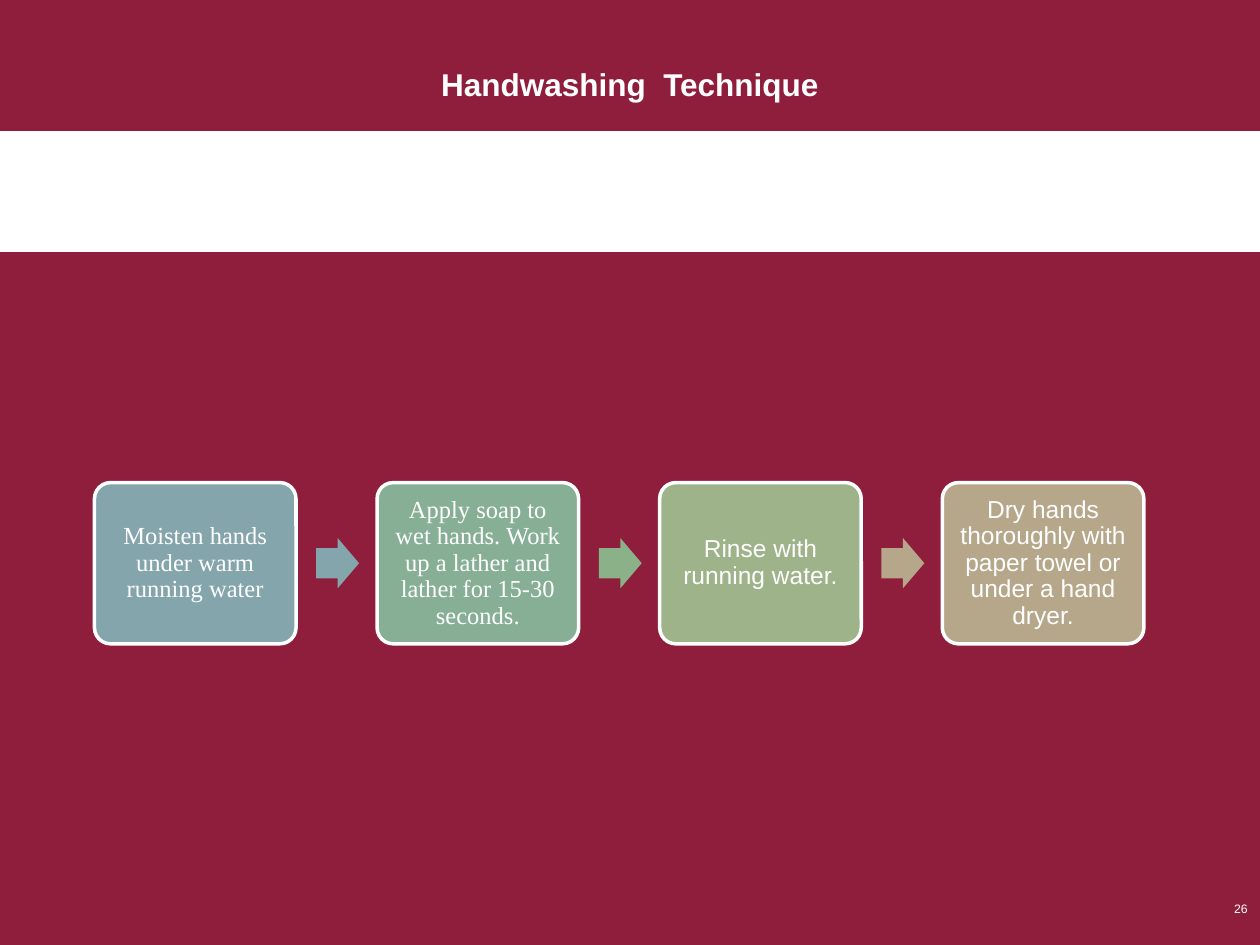
from pptx import Presentation
from pptx.dml.color import RGBColor
from pptx.enum.shapes import MSO_SHAPE as Shape
from pptx.enum.text import MSO_ANCHOR as Anchor, PP_ALIGN as Align
from pptx.util import Inches, Pt

BURGUNDY = RGBColor(0x8E, 0x1E, 0x3C)
WHITE = RGBColor(0xFF, 0xFF, 0xFF)
BLUE = RGBColor(0x85, 0xA5, 0xAC)
TEAL = RGBColor(0x87, 0xAF, 0x95)
GREEN = RGBColor(0x8B, 0xB1, 0x88)
OLIVE = RGBColor(0x9E, 0xB3, 0x89)
TAN = RGBColor(0xB6, 0xA7, 0x8B)

WIDTH, HEIGHT = 10, 7.5
BAND_TOP, BAND_HEIGHT = 1.04, 0.96
FIRST_COLUMN, COLUMN_STEP, ROW_MIDDLE = 0.75, 2.243, 4.47
STEP_WIDTH, STEP_HEIGHT = 1.6, 1.28
ARROW_OFFSET, ARROW_WIDTH, ARROW_HEIGHT = 1.76, 0.34, 0.4

STEPS = [
    ("Moisten hands under warm running water", "Times New Roman", BLUE, BLUE),
    ("Apply soap to wet hands. Work up a lather and lather for 15-30 seconds.",
     "Times New Roman", TEAL, GREEN),
    ("Rinse with running water.", "Arial", OLIVE, TAN),
    ("Dry hands thoroughly with paper towel or under a hand dryer.", "Arial", TAN, None),
]


def add_block(kind, left, top, width, height, color, adjustments=()):
    shape = slide.shapes.add_shape(
        kind, Inches(left), Inches(top), Inches(width), Inches(height))
    shape.shadow.inherit = False
    shape.fill.solid()
    shape.fill.fore_color.rgb = color
    shape.line.fill.background()
    for index, value in enumerate(adjustments):
        shape.adjustments[index] = value
    return shape


def write_text(shape, text, inset, font_format, paragraph_format):
    frame = shape.text_frame
    frame.word_wrap = True
    frame.vertical_anchor = Anchor.MIDDLE
    for side in ("left", "top", "right", "bottom"):
        setattr(frame, f"margin_{side}", Inches(inset))
    paragraph = frame.paragraphs[0]
    paragraph.text = text
    for name, value in paragraph_format.items():
        setattr(paragraph, name, value)
    for name, value in font_format.items():
        setattr(paragraph.font, name, value)
    paragraph.font.color.rgb = WHITE


presentation = Presentation()
presentation.slide_width = Inches(WIDTH)
presentation.slide_height = Inches(HEIGHT)
slide = presentation.slides.add_slide(presentation.slide_layouts[6])
slide.background.fill.solid()
slide.background.fill.fore_color.rgb = BURGUNDY

add_block(Shape.RECTANGLE, 0, BAND_TOP, WIDTH, BAND_HEIGHT, WHITE)

title = slide.shapes.add_textbox(
    Inches(1.11), 0, Inches(WIDTH - 2 * 1.11), Inches(BAND_TOP))
write_text(title, "Handwashing  Technique", 0.1,
           {"name": "Arial", "size": Pt(18), "bold": True}, {"alignment": Align.CENTER})
title.text_frame.margin_top = Inches(0.4)

page_number = slide.shapes.add_textbox(
    Inches(0.04), Inches(HEIGHT - 0.57), Inches(WIDTH - 0.04), Inches(0.57))
write_text(page_number, "26", 0.1,
           {"name": "Arial", "size": Pt(7)}, {"alignment": Align.RIGHT})

for column, (text, font_name, step_color, arrow_color) in enumerate(STEPS):
    left = FIRST_COLUMN + column * COLUMN_STEP
    step = add_block(Shape.ROUNDED_RECTANGLE, left, ROW_MIDDLE - STEP_HEIGHT / 2,
                     STEP_WIDTH, STEP_HEIGHT, step_color, [0.1])
    step.line.color.rgb = WHITE
    step.line.width = Pt(2)
    write_text(step, text, 0.06, {"name": font_name, "size": Pt(14)},
               {"alignment": Align.CENTER, "line_spacing": 0.9})
    if arrow_color is not None:
        add_block(Shape.RIGHT_ARROW, left + ARROW_OFFSET, ROW_MIDDLE - ARROW_HEIGHT / 2,
                  ARROW_WIDTH, ARROW_HEIGHT, arrow_color, [0.6, 0.5])

presentation.save("out.pptx")
